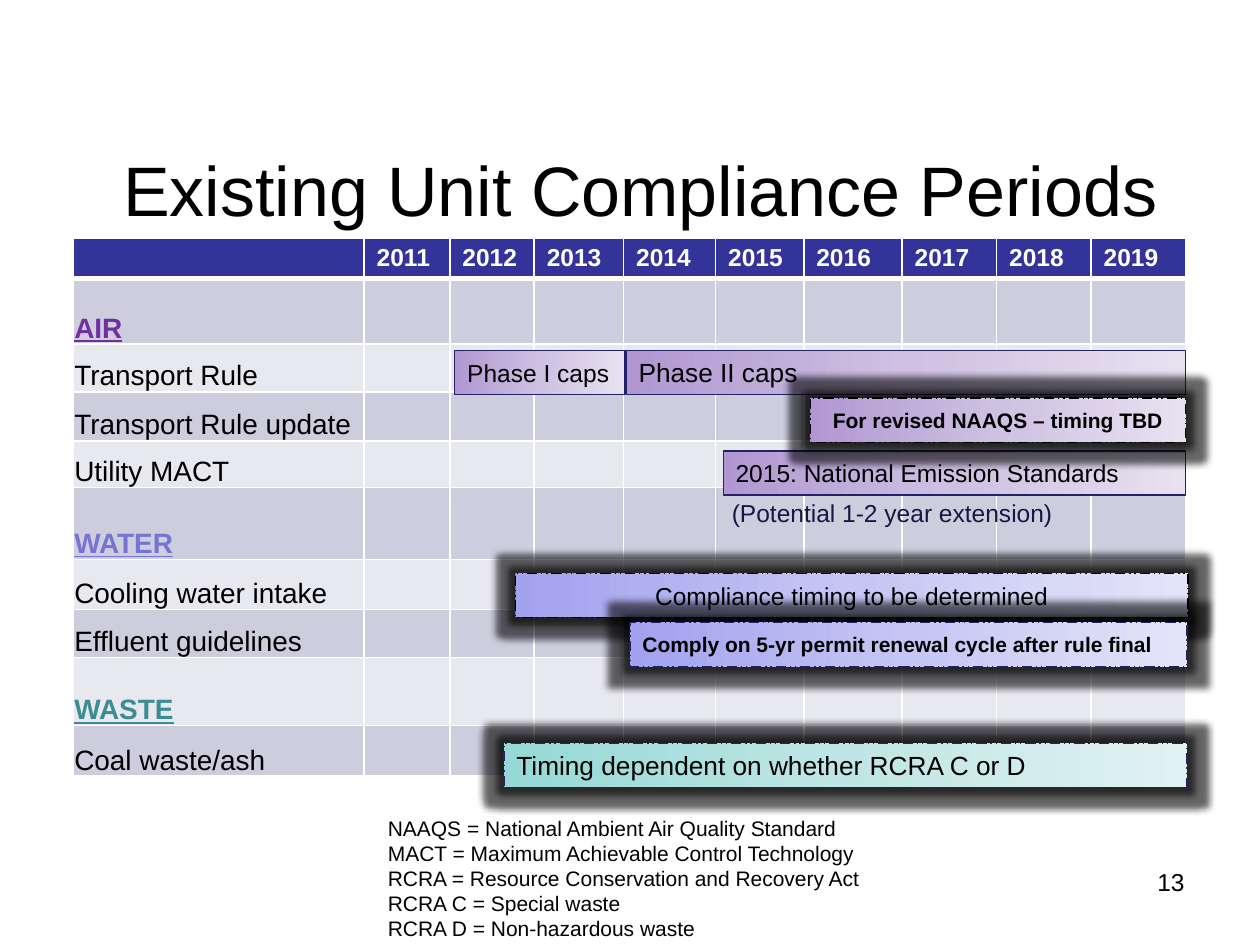
from copy import deepcopy

from pptx import Presentation
from pptx.dml.color import RGBColor
from pptx.enum.dml import MSO_LINE
from pptx.enum.shapes import MSO_SHAPE
from pptx.enum.text import MSO_ANCHOR, PP_ALIGN
from pptx.oxml import parse_xml
from pptx.oxml.ns import nsdecls, qn
from pptx.util import Inches, Pt

rgb = RGBColor.from_string


def write(tf, text, size=14, color="000000", bold=False, underline=False,
          align=PP_ALIGN.LEFT):
    """Fill a text frame, one paragraph per line of text."""
    for i, line in enumerate(text.split("\n")):
        p = tf.add_paragraph() if i else tf.paragraphs[0]
        p.alignment = align
        r = p.add_run()
        r.text = line
        r.font.name = "Arial"
        r.font.size = Pt(size)
        r.font.bold = bold
        r.font.underline = underline
        r.font.color.rgb = rgb(color)


def set_borders(cell, top, bottom):
    """Draw white cell borders; top and bottom widths are in points."""
    tcPr = cell._tc.get_or_add_tcPr()
    for i, (side, width) in enumerate(zip("LRTB", (1, 1, top, bottom))):
        tcPr.insert(i, parse_xml(
            f'<a:ln{side} {nsdecls("a")} w="{Pt(width)}"><a:solidFill>'
            f'<a:srgbClr val="FFFFFF"/></a:solidFill></a:ln{side}>'))


prs = Presentation()
prs.slide_width, prs.slide_height = Inches(10), Inches(7.5)
slide = prs.slides.add_slide(prs.slide_layouts[5])

# Title
title = slide.shapes.title
title.left, title.top = Inches(0.58), Inches(1)
title.width, title.height = Inches(9), Inches(1)
title.fill.solid()
title.fill.fore_color.rgb = rgb("FFFFFF")
title.text_frame.vertical_anchor = MSO_ANCHOR.MIDDLE
write(title.text_frame, "Existing Unit Compliance Periods", size=40,
      align=PP_ALIGN.CENTER)

# Timeline table
col_widths = [2.31, 0.68, 0.67, 0.71, 0.73, 0.7, 0.78, 0.75, 0.75, 0.75]
row_heights = [0.32, 0.52, 0.38, 0.39, 0.37, 0.57, 0.4, 0.38, 0.54, 0.4]
labels = ["", "AIR", "Transport Rule", "Transport Rule update", "Utility MACT",
          "WATER", "Cooling water intake", "Effluent guidelines",
          "WASTE", "Coal waste/ash"]
section_colors = {"AIR": "7030A0", "WATER": "7575D1", "WASTE": "3C8C93"}

table = slide.shapes.add_table(
    len(row_heights), len(col_widths), Inches(0.58), Inches(1.89),
    Inches(sum(col_widths)), Inches(sum(row_heights))).table
for col, width in zip(table.columns, col_widths):
    col.width = Inches(width)

for i, (label, height) in enumerate(zip(labels, row_heights)):
    table.rows[i].height = Inches(height)
    for j in range(len(col_widths)):
        cell = table.cell(i, j)
        cell.fill.solid()
        cell.fill.fore_color.rgb = rgb(
            "333399" if i == 0 else "CDCDDE" if i % 2 else "E8E8EF")
        set_borders(cell, top=3 if i == 1 else 1, bottom=3 if i == 0 else 1)
        if i == 0 and j > 0:
            write(cell.text_frame, str(2010 + j), color="FFFFFF", bold=True)
            continue
        cell.margin_left = cell.margin_right = cell.margin_top = Inches(0.01)
        cell.margin_bottom = 0
        if label and j == 0:
            section = label in section_colors
            cell.vertical_anchor = MSO_ANCHOR.BOTTOM
            write(cell.text_frame, label, size=16, bold=section,
                  underline=section,
                  color=section_colors.get(label, "000000"))

# Compliance bars
AIR = ["B197D2", "CEC1E2", "E7E1F0"]
WATER = ["A2A2EF", "C6C6F4", "E3E3F9"]
WASTE = ["95D9D6", "BFE6E4", "E0F2F1"]
NAVY, BLACK = "222267", "000000"
CENTER = {"align": PP_ALIGN.CENTER}

# left, top, width, gradient, line colour, tentative, text, text format
bars = [
    (5.74, 3.58, 3.67, AIR, NAVY, False,
     "2015: National Emission Standards", {}),
    (3.61, 2.78, 1.35, AIR, NAVY, False, "Phase I caps", {}),
    (4.97, 2.78, 4.44, AIR, NAVY, False, "Phase II caps", {"size": 15}),
    (6.43, 3.16, 2.98, AIR, BLACK, True, "For revised NAAQS – timing TBD",
     {"size": 12, "bold": True, **CENTER}),
    (4.09, 4.55, 5.34, WATER, BLACK, True,
     "Compliance timing to be determined", CENTER),
    (4, 5.9, 5.42, WASTE, NAVY, True,
     "Timing dependent on whether RCRA C or D", {"size": 15}),
    (5, 4.94, 4.42, WATER, NAVY, True,
     "Comply on 5-yr permit renewal cycle after rule final",
     {"size": 12, "bold": True}),
]
for left, top, width, gradient, line, tentative, text, fmt in bars:
    s = slide.shapes.add_shape(MSO_SHAPE.RECTANGLE, Inches(left), Inches(top),
                               Inches(width), Inches(0.35))
    s.shadow.inherit = False
    s.fill.gradient()
    s.fill.gradient_angle = 0
    stops = s._element.spPr.find(".//" + qn("a:gsLst"))
    stops.append(deepcopy(stops[-1]))
    for stop, color, position in zip(s.fill.gradient_stops, gradient, (0, 0.5, 1)):
        stop.color.rgb = rgb(color)
        stop.position = position
    s.line.color.rgb = rgb(line)
    s.line.width = Pt(0.75)
    if tentative:
        s.line.dash_style = MSO_LINE.DASH_DOT_DOT
        s._element.spPr.find(qn("a:effectLst")).append(parse_xml(
            f'<a:glow {nsdecls("a")} rad="{Inches(0.11)}"><a:srgbClr val="000000">'
            '<a:alpha val="60000"/></a:srgbClr></a:glow>'))
    s.text_frame.word_wrap = True
    s.text_frame.vertical_anchor = MSO_ANCHOR.MIDDLE
    write(s.text_frame, text, **fmt)

# Abbreviations, extension note and page number
abbreviations = "\n".join([
    "NAAQS = National Ambient Air Quality Standard",
    "MACT = Maximum Achievable Control Technology",
    "RCRA = Resource Conservation and Recovery Act",
    "RCRA C = Special waste",
    "RCRA D = Non-hazardous waste",
])
notes = [
    (2.98, 6.42, 3.97, 1.11, abbreviations, {"size": 12}),
    (5.71, 3.9, 2.76, 0.34, "(Potential 1-2 year extension)",
     {"color": "171745"}),
    (7.17, 6.83, 2.33, 0.52, "13", {"align": PP_ALIGN.RIGHT}),
]
for left, top, width, height, text, fmt in notes:
    box = slide.shapes.add_textbox(Inches(left), Inches(top),
                                   Inches(width), Inches(height))
    box.text_frame.word_wrap = text == "13"
    write(box.text_frame, text, **fmt)

prs.save("out.pptx")
